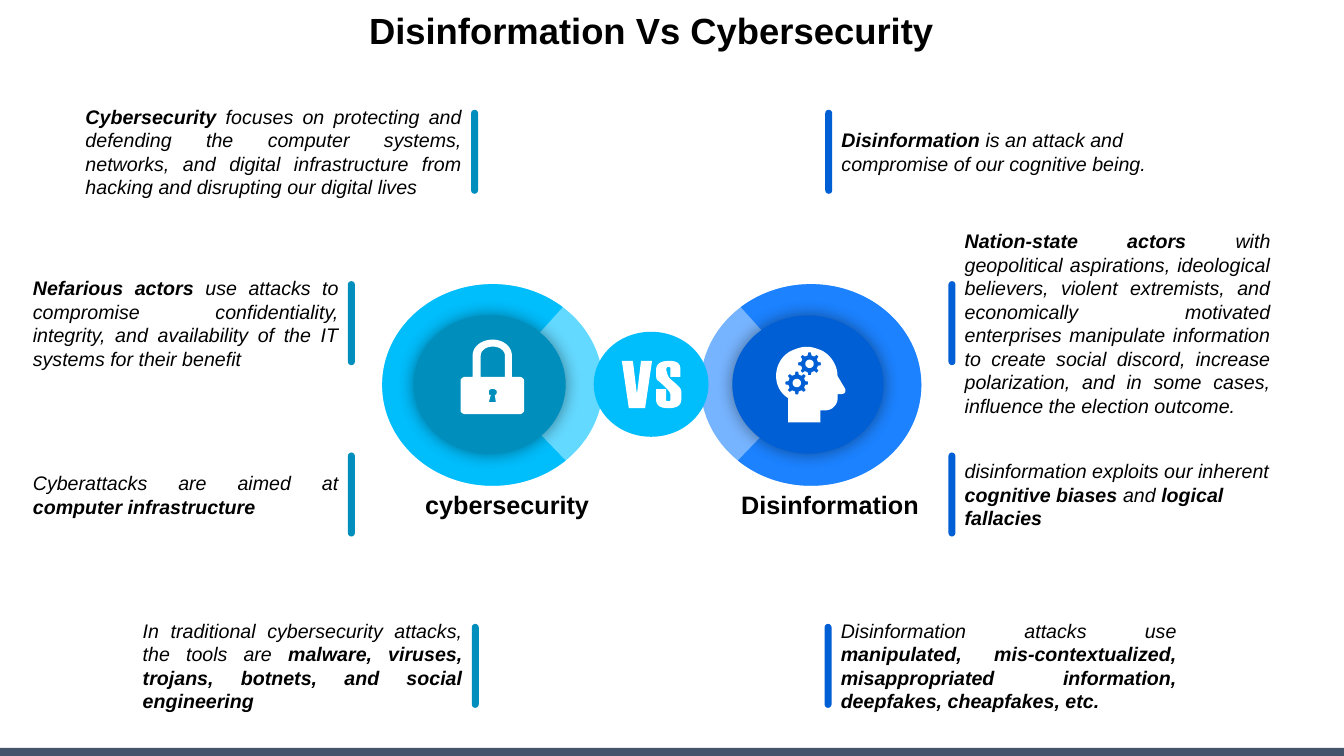
import math

import pptx
import pptx.dml.color
import pptx.enum.shapes
import pptx.enum.text
import pptx.oxml
import pptx.oxml.ns
import pptx.util

Pt = pptx.util.Pt
Kind = pptx.enum.shapes.MSO_SHAPE
Align = pptx.enum.text.PP_ALIGN
Anchor = pptx.enum.text.MSO_ANCHOR

HUES = {
    "black": "000000", "white": "FFFFFF", "slate": "44546A",
    "teal": "008EBC", "cyan": "00BDFB", "sky": "64D9FF",
    "navy": "005FD4", "blue": "1C82FF", "pale": "77B4FF",
}

# Outlines in points: a pair is a corner, six numbers are a Bezier curve
LOCK = [
    [(23, 0), (30.5, 0, 36.7, 5, 36.7, 11.5), (36.7, 26.6), (41.8, 26.6),
     (43.8, 26.6, 45.4, 28, 45.4, 29.5), (45.4, 50.4),
     (45.4, 52, 43.8, 53.3, 41.8, 53.3), (3.6, 53.3),
     (1.6, 53.3, 0, 52, 0, 50.4), (0, 29.5), (0, 28, 1.6, 26.6, 3.6, 26.6),
     (8.6, 26.6), (8.6, 11.5), (8.6, 5, 15, 0, 23, 0)],
    [(23, 5), (18, 5, 14.4, 8, 14.4, 11.5), (14.4, 26.6), (31.7, 26.6),
     (31.7, 11.5), (31.7, 8, 28, 5, 23, 5)],
    [(23, 35.3), (20.9, 35.3, 20.2, 36, 20.2, 37.4),
     (20.2, 38.9, 20.2, 39.6, 21.6, 39.6), (20.2, 44.6), (25.2, 44.6),
     (24.5, 39.6), (25.2, 39.6, 25.9, 38.9, 25.9, 37.4),
     (25.9, 36, 24.5, 35.3, 23, 35.3)],
]
HEAD = [
    [(21.6, 0), (25.9, 0, 29.5, 1.4, 33.1, 2.9),
     (39.6, 6.5, 43.9, 13.7, 43.9, 20.9), (49, 29.5),
     (50.4, 31.7, 49, 33.8, 46.8, 33.8), (43.9, 33.8), (43.9, 37.4),
     (43.9, 39.6, 42.5, 41.8, 41, 43.2),
     (39.6, 44.6, 37.4, 45.4, 35.3, 45.4), (31.7, 45.4), (31.7, 54),
     (8.6, 54), (8.6, 36.7), (2.9, 33.1, 0, 27.4, 0, 20.9),
     (0, 13.7, 3.6, 6.5, 10.8, 2.9), (14.4, 1.4, 18, 0, 21.6, 0)],
]
VERSUS = [
    [(0, 0), (7.9, 0), (10.8, 23.8), (13.7, 0), (21.6, 0), (16.6, 33.8),
     (5, 33.8)],
    [(33.8, 0), (38.9, 0, 41.8, 1.4, 41.8, 5.8), (41.8, 11.5), (34.6, 11.5),
     (34.6, 5), (34.6, 5, 34.6, 4.3, 33.1, 4.3),
     (32.4, 4.3, 31.7, 5, 31.7, 6.5), (32.4, 8.6),
     (32.4, 9.4, 33.1, 11.5, 34.6, 13), (38.2, 15.8, 40.3, 18, 41, 18.7),
     (42.5, 20.2, 42.5, 21.6, 42.5, 23), (42.5, 27.4),
     (42.5, 31.7, 39.6, 33.8, 33.1, 33.8),
     (27.4, 33.8, 24.5, 31.7, 24.5, 28), (24.5, 20.2), (31.7, 20.2),
     (31.7, 28), (31.7, 28.8, 32.4, 28.8, 33.1, 28.8),
     (33.8, 28.8, 34.6, 28.8, 34.6, 28), (34.6, 23.8),
     (34.6, 23, 33.8, 21.6, 31.7, 19.4),
     (28.8, 16.6, 26.6, 14.4, 25.2, 13.7),
     (24.5, 12.2, 24.5, 11.5, 24.5, 10), (24.5, 6.5),
     (24.5, 2.2, 27.4, 0, 33.8, 0)],
]

# Notes: side, bar centre, row, width, height, alignment, text (** for bold)
NOTES = [
    ("right", 592, 0, 232.6, 58.3, Align.LEFT,
     "**Disinformation** is an attack and compromise of our cognitive being."),
    ("right", 680, 1, 232.6, 159.8, Align.JUSTIFY,
     "**Nation-state actors **with geopolitical aspirations, ideological "
     "believers, violent extremists, and economically motivated enterprises "
     "manipulate information to create social discord, increase polarization, "
     "and in some cases, influence the election outcome."),
    ("right", 680, 2, 232.6, 58.3, Align.LEFT,
     "disinformation exploits our inherent **cognitive biases **and "
     "**logical fallacies**"),
    ("right", 591.5, 3, 254.2, 75, Align.JUSTIFY,
     "Disinformation attacks use **manipulated, mis-contextualized, "
     "misappropriated information, deepfakes, cheapfakes, etc.**"),
    ("left", 339, 0, 283, 92, Align.JUSTIFY,
     "**Cybersecurity **focuses on protecting and defending the computer "
     "systems, networks, and digital infrastructure from hacking and "
     "disrupting our digital lives"),
    ("left", 251, 1, 232.6, 75, Align.JUSTIFY,
     "**Nefarious actors **use attacks to compromise confidentiality, "
     "integrity, and availability of the IT systems for their benefit"),
    ("left", 251, 2, 232.6, 41, Align.JUSTIFY,
     "Cyberattacks are aimed at **computer infrastructure**"),
    ("left", 339.5, 3, 242.6, 75, Align.JUSTIFY,
     "In traditional cybersecurity attacks, the tools are **malware, viruses, "
     "trojans, botnets, and social engineering**"),
]


def tint(name):
    return pptx.dml.color.RGBColor.from_string(HUES[name])


def paint(shape, hue):
    shape.shadow.inherit = False
    shape.fill.solid()
    shape.fill.fore_color.rgb = tint(hue)
    shape.line.fill.background()
    return shape


def block(slide, kind, box, hue):
    return paint(slide.shapes.add_shape(kind, *map(Pt, box)), hue)


def write(slide, text, box, size=14, bold=False, slant=False,
          align=Align.CENTER, anchor=Anchor.TOP, grow=True, lead=None):
    frame = slide.shapes.add_textbox(*map(Pt, box)).text_frame
    frame.word_wrap = True
    frame.vertical_anchor = anchor
    if grow:
        frame.auto_size = pptx.enum.text.MSO_AUTO_SIZE.SHAPE_TO_FIT_TEXT
    para = frame.paragraphs[0]
    para.alignment = align
    para.line_spacing = lead
    for i, part in enumerate(text.split("**")):
        if part:
            run = para.add_run()
            run.text = part
            font = run.font
            font.name, font.size = "Arial", Pt(size)
            font.bold, font.italic = bold or i % 2 == 1, slant
            font.color.rgb = tint("black")


def glow(shape):
    shade = pptx.oxml.parse_xml(
        f'<a:outerShdw {pptx.oxml.ns.nsdecls("a")} blurRad="{Pt(12)}" dist="0" '
        'algn="ctr" rotWithShape="0"><a:srgbClr val="000000">'
        '<a:alpha val="42000"/></a:srgbClr></a:outerShdw>')
    shape._element.spPr.find(pptx.oxml.ns.qn("a:effectLst")).append(shade)


def disc(slide, x, back, ring, core, start, end):
    outer = (x, 203, 157.7, 144)
    block(slide, Kind.OVAL, outer, back)
    # Pie angles are in degrees, and 0.6 turns them into adjustment units
    pie = block(slide, Kind.PIE if hasattr(Kind, "PIE") else Kind.CHORD, outer, ring)
    pie.adjustments[0], pie.adjustments[1] = start * 0.6, end * 0.6
    inner = block(slide, Kind.OVAL, (x + 22.7, 225.4, 108, 98.6), core)
    glow(inner)
    return inner


def gear(x, y, teeth=8):
    rim = []
    for i in range(teeth):
        for turn, r in ((-13, 6.2), (-7, 8.2), (7, 8.2), (13, 6.2)):
            a = math.radians(i * 360 / teeth + turn)
            rim.append((x + r * math.cos(a), y + r * math.sin(a)))
    angles = [math.radians(a) for a in range(0, 360, 15)]
    hole = [(x + 3 * math.cos(a), y + 3 * math.sin(a)) for a in angles]
    return [rim, hole]


def trace(steps):
    dots = [steps[0]]
    for step in steps[1:]:
        if len(step) == 2:
            dots.append(step)
            continue
        curve = (dots[-1], step[:2], step[2:4], step[4:])
        for t in (i / 10 for i in range(1, 11)):
            parts = ((1 - t) ** 3, 3 * t * (1 - t) ** 2, 3 * t * t * (1 - t), t ** 3)
            dots.append(tuple(sum(w * p[k] for w, p in zip(parts, curve))
                              for k in (0, 1)))
    return [(x * 100, y * 100) for x, y in dots]


def icon(slide, loops, x, y):
    first, *rest = map(trace, loops)
    pen = slide.shapes.build_freeform(*first[0], scale=Pt(1) / 100)
    pen.add_line_segments(first[1:], close=True)
    for dots in rest:
        pen.move_to(*dots[0])
        pen.add_line_segments(dots[1:], close=True)
    paint(pen.convert_to_shape(Pt(x), Pt(y)), "white")


def note(slide, side, bar, row, wide, high, align, text):
    mid = 108.4 + 122.4 * row
    left = bar + 2 if side == "right" else bar - 2 - wide
    write(slide, text, (left, mid - high / 2, wide, high), slant=True,
          align=align, anchor=Anchor.MIDDLE)
    strip = block(slide, Kind.ROUNDED_RECTANGLE, (bar - 2.5, mid - 30, 5, 60),
                  "navy" if side == "right" else "teal")
    strip.adjustments[0] = 0.5


def main():
    deck = pptx.Presentation()
    deck.slide_width, deck.slide_height = Pt(960), Pt(540)
    slide = deck.slides.add_slide(deck.slide_layouts[6])

    # Footer band and title
    block(slide, Kind.RECTANGLE, (0, 534.2, 960, 5.8), "slate")
    write(slide, "Disinformation Vs Cybersecurity ", (59.8, 5.8, 818.6, 34.6),
          size=26, bold=True, anchor=Anchor.MIDDLE, grow=False, lead=0.9)

    # Notes with their bars
    for item in NOTES:
        note(slide, *item)

    # Discs, the right one mirrored
    core = disc(slide, 273, "sky", "cyan", "teal", 46, 312)
    core.line.color.rgb = tint("teal")
    core.line.width = Pt(0.75)
    disc(slide, 500.4, "pale", "blue", "navy", 228, 134)
    block(slide, Kind.OVAL, (424.1, 237, 82, 75), "cyan")

    # Icons and captions
    icon(slide, LOCK, 329, 242.6)
    icon(slide, HEAD + gear(14.8, 25.9) + gear(23.9, 12.2), 554.4, 247.7)
    icon(slide, VERSUS, 444.2, 257.8)
    for text, x, wide in (("cybersecurity", 287.3, 149.8),
                          ("Disinformation", 514, 157.7)):
        write(slide, text, (x, 346.3, wide, 28.8), size=18, bold=True)

    deck.save("out.pptx")


if __name__ == "__main__":
    main()
